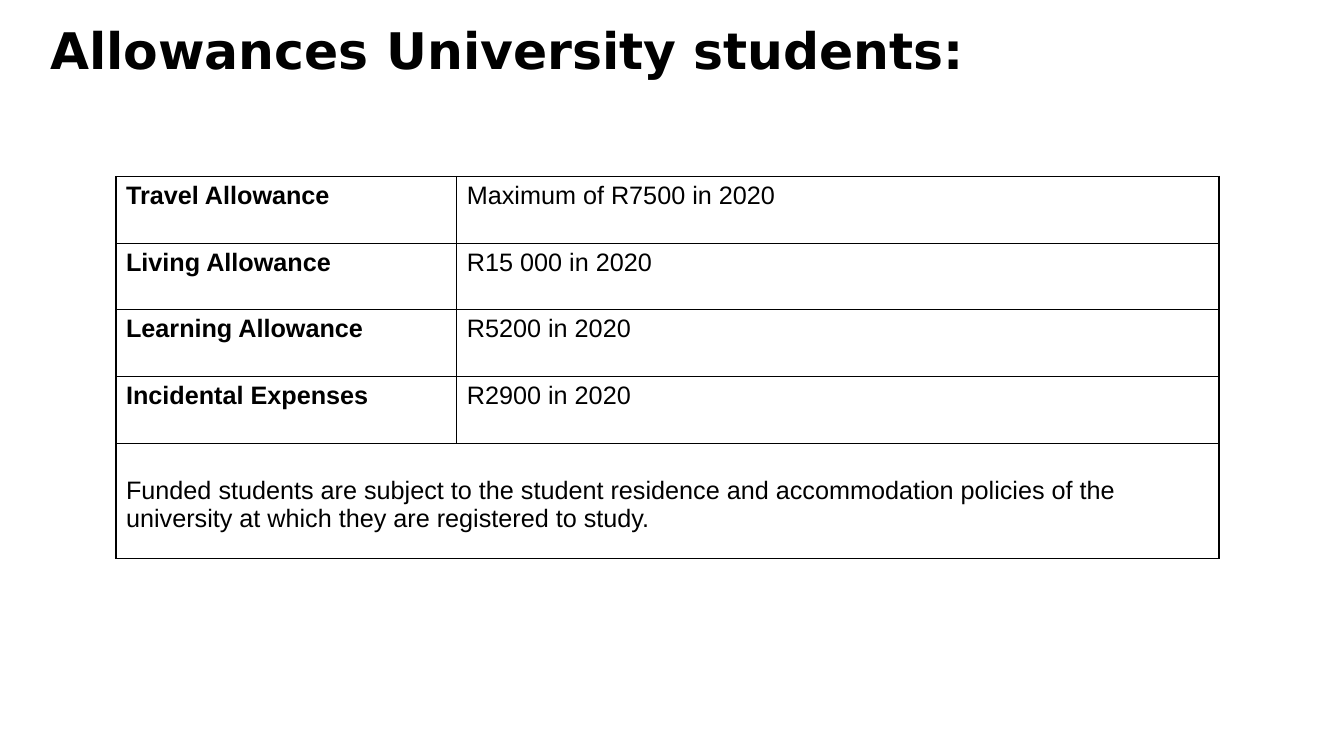
from dataclasses import dataclass

from lxml import etree
from pptx import Presentation
from pptx.dml.color import RGBColor
from pptx.enum.text import MSO_ANCHOR
from pptx.oxml.ns import qn
from pptx.slide import Slide
from pptx.table import _Cell
from pptx.text.text import TextFrame
from pptx.util import Inches, Length, Pt

TOP = MSO_ANCHOR.TOP
SLIDE_W, SLIDE_H = 13.33, 7.5
BLACK = "000000"
BORDER_SIDES = ("a:lnL", "a:lnR", "a:lnT", "a:lnB")
COLUMN_SHARES = (25.36, 56.71)
ROW_SHARE, NOTE_SHARE = 8.83, 15.2


@dataclass(frozen=True)
class Allowance:
    name: str
    amount: str


ALLOWANCES = (
    Allowance("Travel Allowance", "Maximum of R7500 in 2020"),
    Allowance("Living Allowance", "R15 000 in 2020"),
    Allowance("Learning Allowance", "R5200 in 2020"),
    Allowance("Incidental Expenses", "R2900 in 2020"),
)
NOTE = (
    "Funded students are subject to the student residence and accommodation "
    "policies of the university at which they are registered to study."
)


def across(percent: float) -> Length:
    return Inches(SLIDE_W * percent / 100)


def down(percent: float) -> Length:
    return Inches(SLIDE_H * percent / 100)


def color(value: str) -> RGBColor:
    return RGBColor.from_string(value)


def write(tf: TextFrame, text: str, font: str, size: int, bold: bool) -> None:
    tf.text = text
    r = tf.paragraphs[0].runs[0]
    r.font.name = font
    r.font.size = Pt(size)
    r.font.bold = bold
    r.font.color.rgb = color(BLACK)


def style_cell(cell: _Cell) -> None:
    props = cell._tc.get_or_add_tcPr()
    for side in BORDER_SIDES:
        line = etree.SubElement(props, qn(side), w=str(Pt(1)))
        fill = etree.SubElement(line, qn("a:solidFill"))
        etree.SubElement(fill, qn("a:srgbClr"), val=BLACK)
    cell.fill.background()
    cell.vertical_anchor = TOP


def add_title(s: Slide, text: str) -> None:
    sp = s.shapes.add_textbox(across(3), down(1.87), across(86.72), down(9.47))
    sp.text_frame.word_wrap = True
    write(sp.text_frame, text, "DejaVu Sans", 36, True)


def add_allowances(s: Slide) -> None:
    count = len(ALLOWANCES)
    row_shares = [ROW_SHARE] * count + [NOTE_SHARE]
    table = s.shapes.add_table(
        len(row_shares), len(COLUMN_SHARES), across(8.63), down(23.33),
        across(sum(COLUMN_SHARES)), down(sum(row_shares)),
    ).table
    table.first_row = False
    table.horz_banding = False
    for column, share in zip(table.columns, COLUMN_SHARES):
        column.width = across(share)
    for row, share in zip(table.rows, row_shares):
        row.height = down(share)
    for cell in table.iter_cells():
        style_cell(cell)
    for i, item in enumerate(ALLOWANCES):
        write(table.cell(i, 0).text_frame, item.name, "Arial", 18, True)
        write(table.cell(i, 1).text_frame, item.amount, "Arial", 18, False)
    note = table.cell(count, 0)
    note.merge(table.cell(count, 1))
    note.margin_top = down(4.4)
    write(note.text_frame, NOTE, "Arial", 18, False)


def main() -> None:
    prs = Presentation()
    prs.slide_width = Inches(SLIDE_W)
    prs.slide_height = Inches(SLIDE_H)
    s = prs.slides.add_slide(prs.slide_layouts[6])
    add_title(s, "Allowances University students:")
    add_allowances(s)
    prs.save("out.pptx")


if __name__ == "__main__":
    main()
